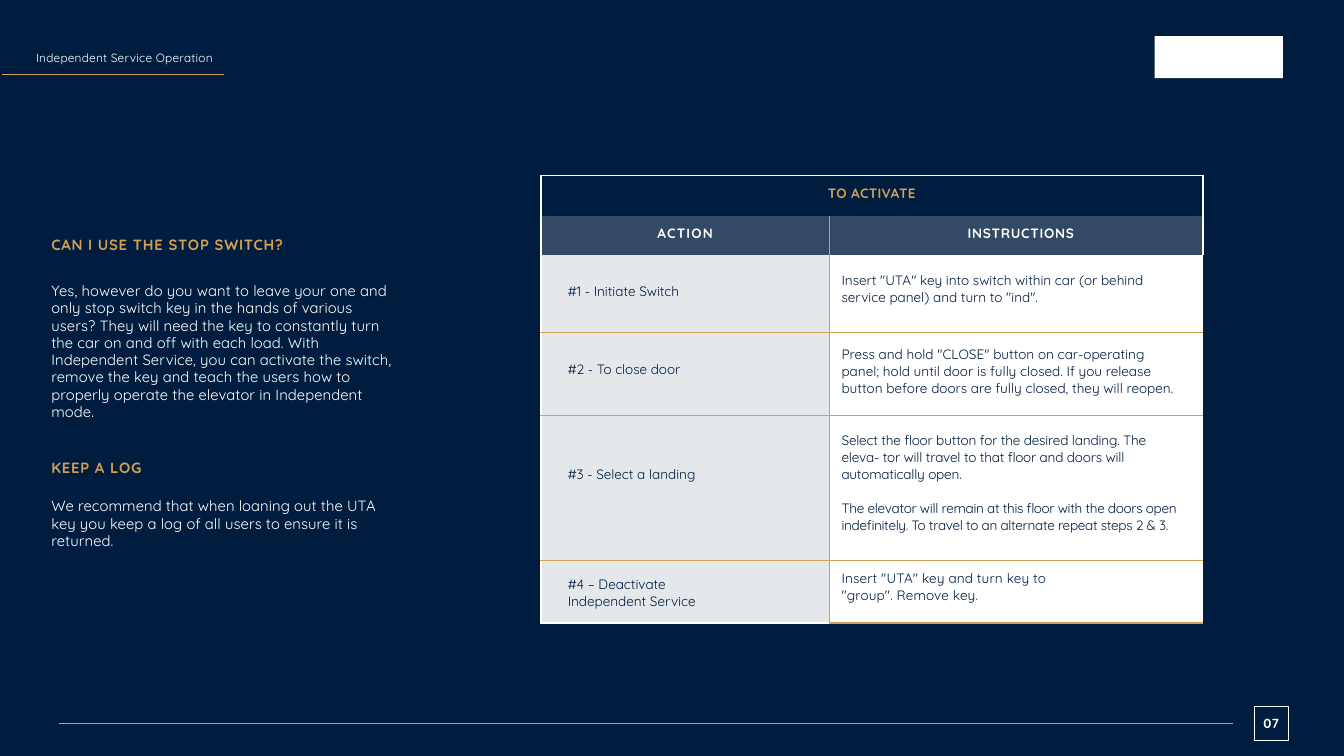
import pptx
import pptx.dml.color
import pptx.enum.shapes
import pptx.enum.text
import pptx.oxml
import pptx.oxml.ns
import pptx.util

PX = 9144
NAVY, SLATE, MIST, WHITE, GOLD = "001D40", "334A66", "E5E8EB", "FFFFFF", "D29F53"
ALIGN = pptx.enum.text.PP_ALIGN
SHAPES = pptx.enum.shapes.MSO_SHAPE
SIDES = {"l": "lnL", "r": "lnR", "t": "lnT", "b": "lnB"}


def px(length):
    return pptx.util.Emu(length * PX)


def color(value):
    return pptx.dml.color.RGBColor.from_string(value)


def add_text(frame, text, size=16, fill=WHITE, bold=False, spacing=0,
             before=0, line=1.0, align=ALIGN.LEFT):
    paragraph = frame.paragraphs[0]
    if paragraph.runs:
        paragraph = frame.add_paragraph()
        paragraph.space_before = pptx.util.Pt(before)
    paragraph.alignment = align
    paragraph.line_spacing = line
    run = paragraph.add_run()
    run.text = text
    run.font.name = "Quicksand"
    run.font.size = pptx.util.Pt(size)
    run.font.bold = bold
    run.font.color.rgb = color(fill)
    run._r.get_or_add_rPr().set("spc", str(round(spacing * 100)))


def clear_margins(frame):
    frame.margin_left = frame.margin_top = frame.margin_right = frame.margin_bottom = 0
    frame.word_wrap = True


def add_box(slide, left, top, width, height):
    box = slide.shapes.add_textbox(px(left), px(top), px(width), px(height))
    clear_margins(box.text_frame)
    return box.text_frame


def add_rectangle(slide, left, top, width, height, fill, line=None):
    shape = slide.shapes.add_shape(SHAPES.RECTANGLE, px(left), px(top), px(width), px(height))
    shape.shadow.inherit = False
    shape.fill.solid()
    shape.fill.fore_color.rgb = color(fill)
    if line:
        shape.line.color.rgb = color(line)
        shape.line.width = pptx.util.Pt(1)
    else:
        shape.line.fill.background()
    return shape


def add_rule(slide, left, top, width):
    rule = slide.shapes.add_connector(
        pptx.enum.shapes.MSO_CONNECTOR.STRAIGHT, px(left), px(top), px(left + width), px(top))
    rule.line.color.rgb = color(GOLD)
    rule.line.width = pptx.util.Pt(1.65)
    rule._element.spPr.append(pptx.oxml.parse_xml(
        f"<a:effectLst {pptx.oxml.ns.nsdecls('a')}/>"))


def add_header(slide, left, top, width):
    frame = add_box(slide, left + 55, top, width - 55, 25)
    add_text(frame, "Independent Service Operation", size=14, spacing=0.25)
    add_rule(slide, left, top + 39, width)
    add_rectangle(slide, left + 1885, top - 24, 210, 69, WHITE)


def add_answer(slide, left, top, width, height, heading, body, gap):
    frame = add_box(slide, left, top, width, height)
    add_text(frame, heading, size=17.5, fill=GOLD, bold=True, spacing=0.9)
    add_text(frame, body, size=17.5, spacing=0.1, before=gap, line=0.97)


def set_borders(cell, borders):
    properties = cell._tc.get_or_add_tcPr()
    for side, tag in SIDES.items():
        if side in borders:
            width = pptx.util.Pt(2.25)
            paint = f'<a:solidFill><a:srgbClr val="{borders[side]}"/></a:solidFill>'
        else:
            width, paint = 0, "<a:noFill/>"
        properties.append(pptx.oxml.parse_xml(
            f'<a:{tag} {pptx.oxml.ns.nsdecls("a")} w="{width}">{paint}</a:{tag}>'))


def format_cell(cell, fill, borders, left=0, top=15, right=0):
    set_borders(cell, borders)
    cell.fill.solid()
    cell.fill.fore_color.rgb = color(fill)
    cell.margin_left, cell.margin_top = px(left), px(top)
    cell.margin_right, cell.margin_bottom = px(right), 0


def add_steps_table(slide, left, top, column_widths, row_heights, steps):
    table = slide.shapes.add_table(
        len(row_heights), len(column_widths), px(left), px(top),
        px(sum(column_widths)), px(sum(row_heights))).table
    table.first_row = table.horz_banding = False
    for column, width in zip(table.columns, column_widths):
        column.width = px(width)
    for row, height in zip(table.rows, row_heights):
        row.height = px(height)

    title = table.cell(0, 0)
    title.merge(table.cell(0, 1))
    for column in range(2):
        format_cell(table.cell(0, column), NAVY, {"l": WHITE, "t": WHITE, "r": WHITE})
    add_text(title.text_frame, "TO ACTIVATE", fill=GOLD, bold=True,
             spacing=0.4, align=ALIGN.CENTER)

    headings = [("ACTION", 0, 1.4, {"l": WHITE, "r": GOLD}),
                ("INSTRUCTIONS", 16, 0.9, {"l": GOLD, "r": WHITE})]
    for column, (text, indent, spacing, borders) in enumerate(headings):
        cell = table.cell(1, column)
        format_cell(cell, SLATE, borders, left=indent)
        add_text(cell.text_frame, text, bold=True, spacing=spacing, align=ALIGN.CENTER)

    last = len(row_heights) - 1
    for index, step in enumerate(steps, start=2):
        action_text, action_top, instruction_top, right, instructions = step
        action_borders = {"l": WHITE, "r": GOLD, "b": WHITE if index == last else GOLD}
        instruction_borders = {"l": GOLD, "b": GOLD}
        if index > 2:
            action_borders["t"] = instruction_borders["t"] = GOLD
        action, instruction = table.cell(index, 0), table.cell(index, 1)
        format_cell(action, MIST, action_borders, left=44, top=action_top, right=180)
        add_text(action.text_frame, action_text, fill=NAVY)
        format_cell(instruction, WHITE, instruction_borders,
                    left=20, top=instruction_top, right=right)
        for text, spacing in instructions:
            add_text(instruction.text_frame, text, fill=NAVY, spacing=spacing, before=20)


def add_footer(slide, left, top, width, number):
    add_rule(slide, left, top + 28, width)
    badge = add_rectangle(slide, left + width + 35, top, 56, 56, NAVY, WHITE)
    clear_margins(badge.text_frame)
    badge.text_frame.vertical_anchor = pptx.enum.text.MSO_ANCHOR.MIDDLE
    add_text(badge.text_frame, number, size=15.5, bold=True, spacing=0.2, align=ALIGN.CENTER)


STEPS = [
    ("#1 - Initiate Switch", 45, 27, 40, [
        ('Insert "UTA" key into switch within car (or behind service panel) and turn to "ind".', 0)]),
    ("#2 - To close door", 47, 22, 40, [
        ('Press and hold "CLOSE" button on car-operating panel; hold until door is fully closed. '
         "If you release button before doors are fully closed, they will reopen.", 0.05)]),
    ("#3 - Select a landing", 83, 27, 40, [
        ("Select the floor button for the desired landing. The eleva- tor will travel to that "
         "floor and doors will automatically open.", -0.16),
        ("The elevator will remain at this floor with the doors open indefinitely. To travel to "
         "an alternate repeat steps 2 & 3.", -0.32)]),
    ("#4 – Deactivate Independent Service", 25, 16, 180, [
        ('Insert "UTA" key and turn key to "group". Remove key.', 0.2)]),
]


def main():
    presentation = pptx.Presentation()
    presentation.slide_width, presentation.slide_height = px(2199), px(1237)
    slide = presentation.slides.add_slide(presentation.slide_layouts[6])
    slide.background.fill.solid()
    slide.background.fill.fore_color.rgb = color(NAVY)
    add_steps_table(slide, 885, 287, [472, 611], [66, 65, 126, 136, 237, 103], STEPS)
    add_answer(slide, 84, 385, 566, 316, "CAN I USE THE STOP SWITCH?",
               "Yes, however do you want to leave your one and only stop switch key in the hands of "
               "various users? They will need the key to constantly turn the car on and off with "
               "each load. With Independent Service, you can activate the switch, remove the key "
               "and teach the users how to properly operate the elevator in Independent mode.", 35)
    add_answer(slide, 84, 751, 566, 151, "KEEP A LOG",
               "We recommend that when loaning out the UTA key you keep a log of all users to "
               "ensure it is returned.", 25)
    add_header(slide, 4, 83, 362)
    add_footer(slide, 96, 1156, 1921, "07")
    presentation.save("out.pptx")


if __name__ == "__main__":
    main()
